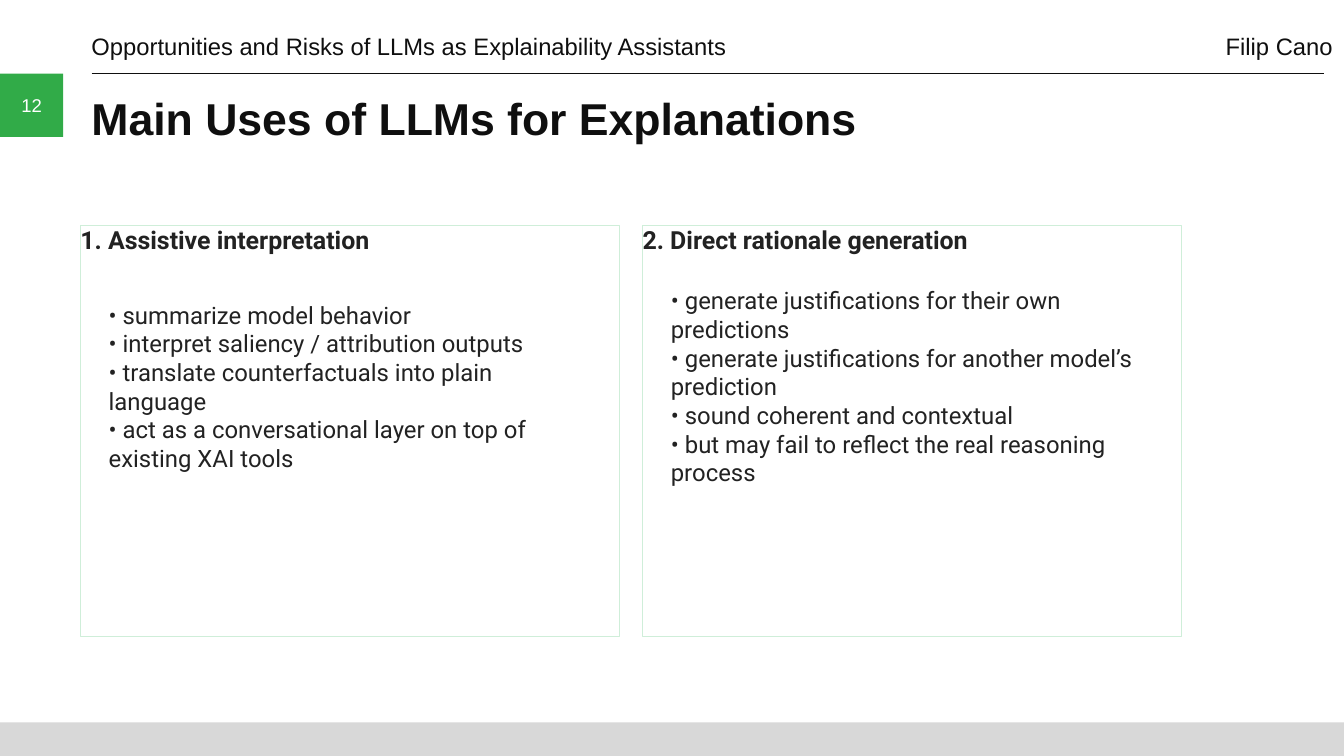
from lxml.etree import SubElement
from pptx import Presentation
from pptx.dml.color import RGBColor
from pptx.enum.shapes import MSO_CONNECTOR, MSO_SHAPE
from pptx.enum.text import MSO_ANCHOR as Anchor, PP_ALIGN as Align
from pptx.oxml.ns import qn
from pptx.util import Cm, Pt

INK = "0F0F0F"
BODY = "222222"
WHITE = "FFFFFF"
GREEN = "31AB48"
GREY = "D8D8D8"
CARD_BORDER = "CFEED9"

SLIDE_WIDTH, SLIDE_HEIGHT = 36.12, 20.32
MARGIN = 2.46
RULE_TOP = 1.98
CARD_LEFT, CARD_TOP = 2.16, 6.05
CARD_WIDTH, CARD_HEIGHT = 14.48, 11.05
CARD_STEP = 15.11

CARDS = [
    ("1. Assistive interpretation", [
        "summarize model behavior",
        "interpret saliency / attribution outputs",
        "translate counterfactuals into plain language",
        "act as a conversational layer on top of existing XAI tools",
    ]),
    ("2. Direct rationale generation", [
        "generate justifications for their own predictions",
        "generate justifications for another model’s prediction",
        "sound coherent and contextual",
        "but may fail to reflect the real reasoning process",
    ]),
]


def color(value):
    return RGBColor.from_string(value)


def write(shape, text, size, ink, font="Arial", bold=False,
          anchor=Anchor.TOP, align=Align.LEFT):
    frame = shape.text_frame
    frame.word_wrap = True
    frame.vertical_anchor = anchor
    frame.margin_left = frame.margin_right = 0
    frame.margin_top = frame.margin_bottom = 0
    frame.text = text
    for paragraph in frame.paragraphs:
        paragraph.alignment = align
        for run in paragraph.runs:
            run.font.name = font
            run.font.size = Pt(size)
            run.font.bold = bold
            run.font.color.rgb = color(ink)


def add_box(slide, left, top, width, height, fill, border=None):
    shape = slide.shapes.add_shape(
        MSO_SHAPE.RECTANGLE, Cm(left), Cm(top), Cm(width), Cm(height))
    shape.shadow.inherit = False
    shape.fill.solid()
    shape.fill.fore_color.rgb = color(fill)
    if border:
        shape.line.color.rgb = color(border)
        shape.line.width = Pt(0.75)
    else:
        shape.line.fill.background()
    return shape


def add_text(slide, left, top, width, height, text, size, ink, **style):
    shape = slide.shapes.add_textbox(Cm(left), Cm(top), Cm(width), Cm(height))
    write(shape, text, size, ink, **style)
    return shape


def add_rule(slide, left, right, top):
    rule = slide.shapes.add_connector(
        MSO_CONNECTOR.STRAIGHT, Cm(left), Cm(top), Cm(right), Cm(top))
    rule.line.color.rgb = color(INK)
    rule.line.width = Pt(0.75)
    SubElement(rule._element.spPr, qn("a:effectLst"))


def add_tab_stop(paragraph, position):
    tabs = SubElement(paragraph._p.get_or_add_pPr(), qn("a:tabLst"))
    SubElement(tabs, qn("a:tab"), pos=str(Cm(position)), algn="l")


def add_header(slide):
    add_rule(slide, MARGIN, 35.59, RULE_TOP)
    header = add_text(
        slide, MARGIN, 0.91, 33.38, 0.71,
        "Opportunities and Risks of LLMs as Explainability Assistants\tFilip Cano",
        18.1, INK, anchor=Anchor.BOTTOM)
    add_tab_stop(header.text_frame.paragraphs[0], 30.48)
    add_text(slide, MARGIN, 2.44, 33.17, 1.93,
             "Main Uses of LLMs for Explanations", 34, INK, bold=True)
    page_number = add_box(slide, 0, RULE_TOP, 1.7, 1.7, GREEN)
    write(page_number, "12", 14.1, WHITE, anchor=Anchor.MIDDLE, align=Align.CENTER)


def add_card(slide, left, heading, points):
    card = add_box(slide, left, CARD_TOP, CARD_WIDTH, CARD_HEIGHT, WHITE, CARD_BORDER)
    write(card, heading, 19, BODY, font="Roboto", bold=True)
    add_text(slide, left + 0.76, 7.65, 12.7, 5.46,
             "\n".join(f"• {point}" for point in points),
             18.2, BODY, font="Roboto", anchor=Anchor.MIDDLE)


def main():
    presentation = Presentation()
    presentation.slide_width = Cm(SLIDE_WIDTH)
    presentation.slide_height = Cm(SLIDE_HEIGHT)
    slide = presentation.slides.add_slide(presentation.slide_layouts[6])
    add_box(slide, 0, 19.42, SLIDE_WIDTH, 0.9, GREY)
    add_header(slide)
    for index, (heading, points) in enumerate(CARDS):
        add_card(slide, CARD_LEFT + index * CARD_STEP, heading, points)
    presentation.save("out.pptx")


if __name__ == "__main__":
    main()
